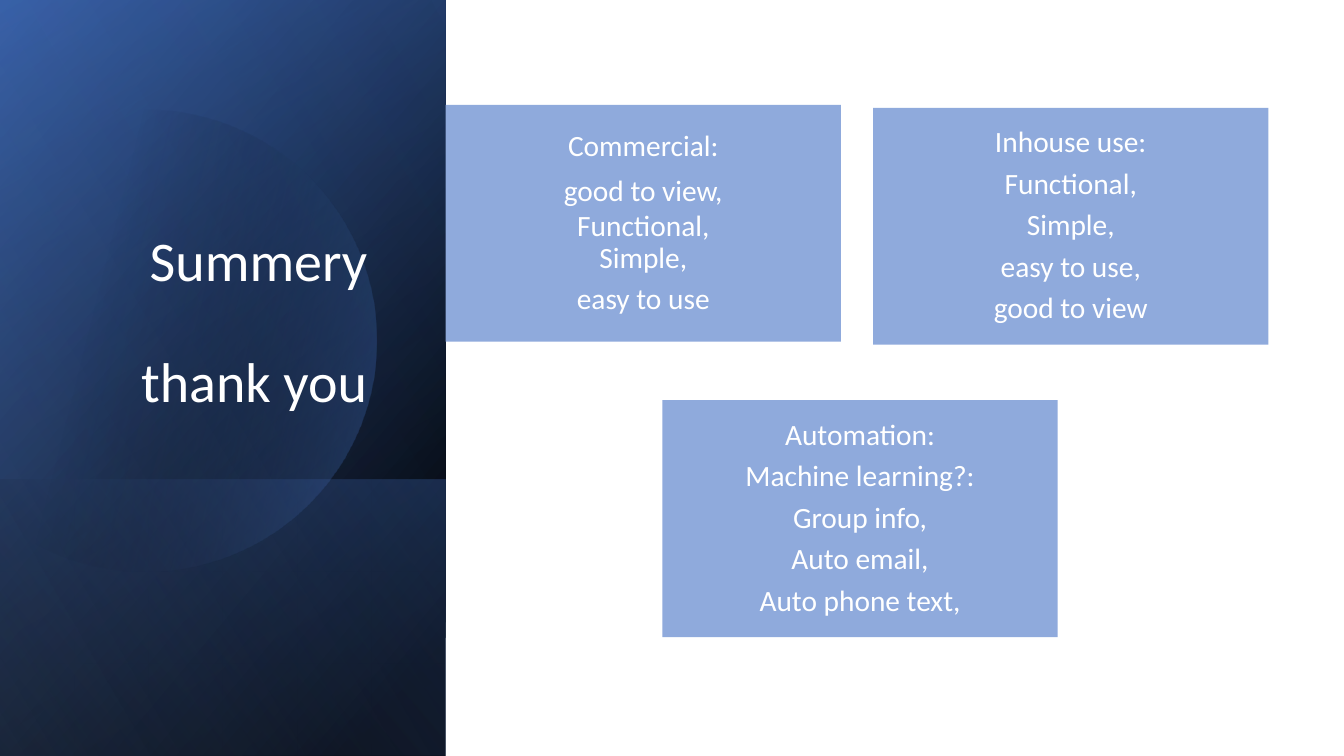
"""Build the summary slide with a shaded side panel and three cards."""
import math

from pptx import Presentation
from pptx import util as u
from pptx.dml.color import RGBColor
from pptx.enum import shapes, text
from pptx.oxml import ns, xmlchemy

RECT = shapes.MSO_SHAPE.RECTANGLE
SIDE = 4.42
CARDS = [
    (4.42, 1.04, ["Commercial:", "good to view,", "Functional,", "Simple,", "easy to use"], (1, 2)),
    (8.66, 1.07, ["Inhouse use:", "Functional,", "Simple,", "easy to use,", "good to view"], ()),
    (6.57, 3.97, ["Automation:", "Machine learning?:", "Group info,", "Auto email,",
                  "Auto phone text,"], ()),
]
PANELS = [
    (0, 7.5, 50, [(8, "000000", 100), (100, "2F5597", 100)]),
    (0, 7.5, 30, [(0, "000000", 0), (99, "4472C4", 46)]),
    (4.76, 2.74, 130, [(2, "4472C4", 29), (100, "000000", 30)]),
]
GLOW = [(29, "000000", 0), (100, "4472C4", 43)]
SHEEN = (0, 7.5, 120, [(0, "000000", 0), (99, "8FAADC", 11)])


def rgb(code):
    """Turn a hex string into a colour."""
    return RGBColor.from_string(code)


def plain(shape):
    """Remove the outline and shadow of a shape."""
    shape.shadow.inherit = False
    shape.line.fill.background()


def blend(shape, angle, stops):
    """Fill a shape with a clockwise-angled gradient of see-through stops."""
    shape.fill.gradient()
    shape.fill.gradient_angle = 360 - angle
    for stop, (place, code, _) in zip(shape.fill.gradient_stops, stops):
        stop.position = place / 100
        stop.color.rgb = rgb(code)
    tints = shape._element.spPr.findall(".//" + ns.qn("a:srgbClr"))
    for tint, (_, _, solid) in zip(tints, stops):
        alpha = xmlchemy.OxmlElement("a:alpha")
        alpha.set("val", str(solid * 1000))
        tint.append(alpha)


def panel(slide, top, high, angle, stops):
    """Draw a side panel, mirrored and turned a quarter."""
    left, up = (SIDE - high) / 2, top + (high - SIDE) / 2
    shape = slide.shapes.add_shape(
        RECT, u.Inches(left), u.Inches(up), u.Inches(high), u.Inches(SIDE))
    plain(shape)
    blend(shape, angle, stops)
    shape.rotation = 90
    shape._element.spPr.xfrm.set("flipH", "1")


def disc(slide, x, y, size, angle, stops):
    """Draw a circle cut off by the left edge of the slide."""
    reach = math.acos(-x / size)
    turns = [reach * (step / 60 - 1) for step in range(121)]
    spots = [(u.Inches(x + size * math.cos(turn)), u.Inches(y + size * math.sin(turn)))
             for turn in turns]
    form = slide.shapes.build_freeform(*spots[0])
    form.add_line_segments(spots[1:], close=True)
    shape = form.convert_to_shape()
    plain(shape)
    blend(shape, angle, stops)


def write(para, words, size, align):
    """Write white words as one run of a paragraph."""
    para.alignment = align
    run = para.add_run()
    run.text = words
    run.font.size = u.Pt(size)
    run.font.name = "Calibri"
    run.font.color.rgb = rgb("FFFFFF")


def title(slide, lines):
    """Write the right-aligned title over the side panel."""
    box = slide.shapes.add_textbox(
        u.Inches(1.1), u.Inches(1.4), u.Inches(2.64), u.Inches(3.36))
    frame = box.text_frame
    frame.word_wrap = True
    frame.vertical_anchor = text.MSO_ANCHOR.BOTTOM
    frame.margin_bottom = u.Inches(0.65)
    for i, words in enumerate(lines):
        para = frame.add_paragraph() if i else frame.paragraphs[0]
        para.line_spacing = 0.9
        para.space_before = u.Pt(43 if i else 0)
        write(para, words, 40, text.PP_ALIGN.RIGHT)


def card(slide, left, top, lines, tight):
    """Draw a card with centred lines; tight ones have no gap below."""
    shape = slide.shapes.add_shape(
        RECT, u.Inches(left), u.Inches(top), u.Inches(3.92), u.Inches(2.35))
    plain(shape)
    shape.fill.solid()
    shape.fill.fore_color.rgb = rgb("8FAADC")
    frame = shape.text_frame
    frame.word_wrap = True
    frame.vertical_anchor = text.MSO_ANCHOR.MIDDLE
    for side in ("left", "top", "right", "bottom"):
        setattr(frame, "margin_" + side, u.Inches(0.09))
    for i, words in enumerate(lines):
        para = frame.add_paragraph() if i else frame.paragraphs[0]
        para.line_spacing = 1.0 if i in tight else 0.9
        para.space_after = u.Pt(0 if i in tight else 7)
        write(para, words, 21, text.PP_ALIGN.CENTER)


def main():
    """Build and save the slide."""
    deck = Presentation()
    deck.slide_width, deck.slide_height = u.Inches(13.33), u.Inches(7.5)
    slide = deck.slides.add_slide(deck.slide_layouts[6])
    for item in PANELS:
        panel(slide, *item)
    disc(slide, 1.44, 3.38, 2.29, 14, GLOW)
    panel(slide, *SHEEN)
    title(slide, ["Summery", "thank you"])
    for item in CARDS:
        card(slide, *item)
    deck.save("out.pptx")


if __name__ == "__main__":
    main()
